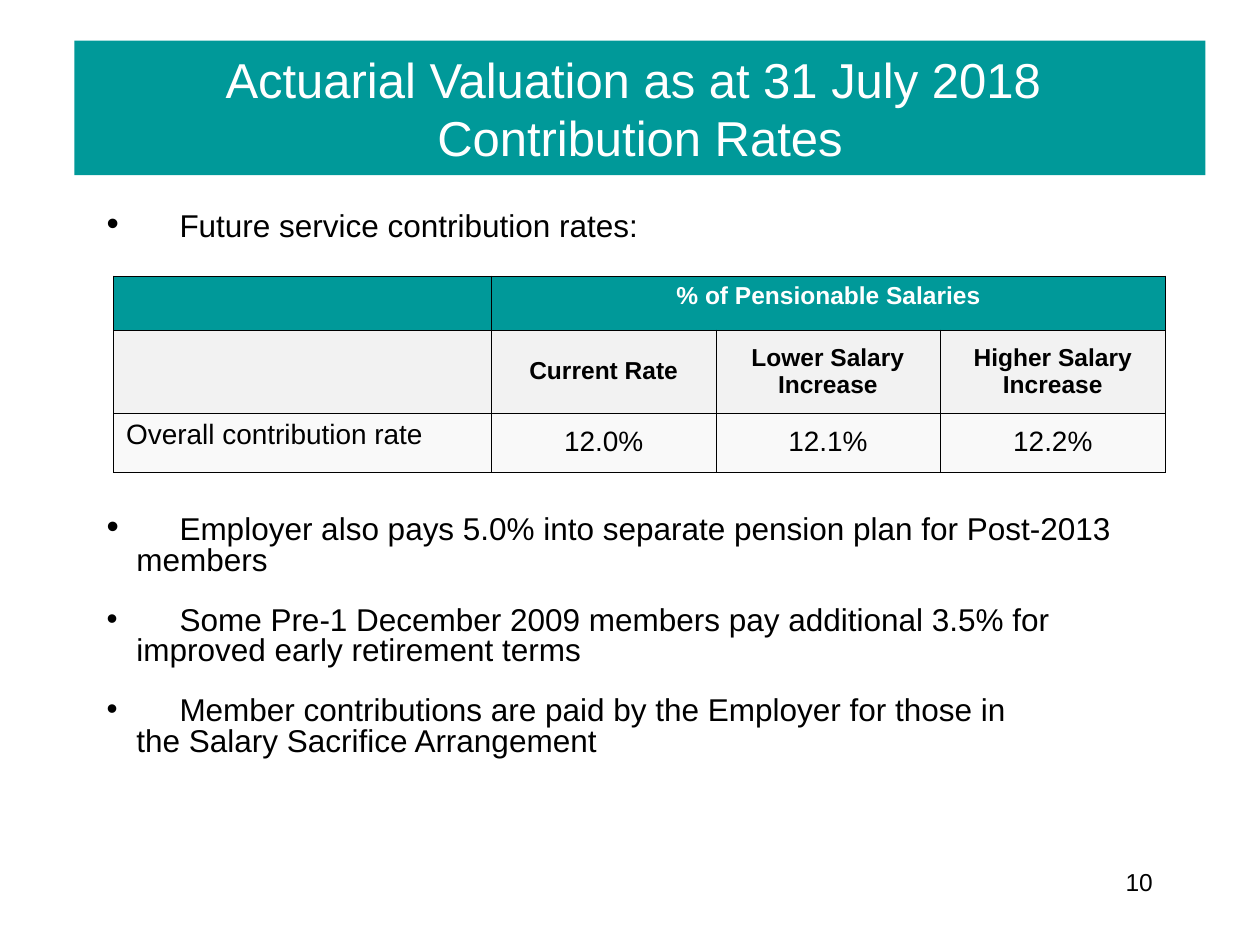
import lxml.etree
import pptx
import pptx.dml.color
import pptx.enum.text
import pptx.oxml.ns
import pptx.util

Cm = pptx.util.Cm
Pt = pptx.util.Pt
ALIGN = pptx.enum.text.PP_ALIGN
ANCHOR = pptx.enum.text.MSO_ANCHOR
qn = pptx.oxml.ns.qn

COLOURS = {"teal": "009999", "white": "FFFFFF", "black": "000000",
           "subheader": "F2F2F2", "body": "F9F9F9"}
FONT = "Arial"

TITLE_LINES = ["Actuarial Valuation as at 31 July 2018 ", "Contribution Rates"]

# lines, bullet size, space before in points
BULLETS = [
    (["Future service contribution rates:"], 20, 0),
    (["Employer also pays 5.0% into separate pension plan for Post-2013 members"], 20, 154),
    (["Some Pre-1 December 2009 members pay additional 3.5% for improved early retirement terms"],
     18, 17),
    (["Member contributions are paid by the Employer for those in",
      "the Salary Sacrifice Arrangement"], 18, 17),
]
HANGING = Cm(0.6)
FIRST_LINE_TAB = Cm(1.47)

COLUMN_WIDTHS = [7.62, 4.52, 4.52, 4.55]
# row height, fill, text colour, size, bold, cell texts
TABLE_ROWS = [
    (1.09, "teal", "white", 14, True, ["", "% of Pensionable Salaries", "", ""]),
    (1.67, "subheader", "black", 14, True,
     ["", "Current Rate", "Lower Salary Increase", "Higher Salary Increase"]),
    (1.19, "body", "black", 16, False,
     ["Overall contribution rate", "12.0%", "12.1%", "12.2%"]),
]
PAGE_NUMBER = "10"


def colour(name):
    return pptx.dml.color.RGBColor.from_string(COLOURS[name])


def add_run(paragraph, text, size, colour_name="black", bold=False):
    run = paragraph.add_run()
    run.text = text
    run.font.name = FONT
    run.font.size = Pt(size)
    run.font.bold = bold
    run.font.color.rgb = colour(colour_name)


def next_paragraph(text_frame, index):
    return text_frame.add_paragraph() if index else text_frame.paragraphs[0]


def add_text_box(slide, left, top, width, height):
    box = slide.shapes.add_textbox(Cm(left), Cm(top), Cm(width), Cm(height))
    box.text_frame.word_wrap = True
    return box.text_frame


def add_title(slide):
    title = slide.shapes.title
    title.left, title.top, title.width, title.height = Cm(1.5), Cm(0.82), Cm(22.8), Cm(2.71)
    title.fill.solid()
    title.fill.fore_color.rgb = colour("teal")
    title.text_frame.auto_size = pptx.enum.text.MSO_AUTO_SIZE.NONE
    title.text_frame.vertical_anchor = ANCHOR.MIDDLE
    for index, line in enumerate(TITLE_LINES):
        paragraph = next_paragraph(title.text_frame, index)
        paragraph.alignment = ALIGN.CENTER
        paragraph.space_before = Pt(0)
        add_run(paragraph, line, 28, "white")


def set_bullet(paragraph):
    """Add a hanging bullet and the tab stop that sets in the first line."""
    properties = paragraph._p.get_or_add_pPr()
    properties.set("marL", str(HANGING))
    properties.set("indent", str(-HANGING))
    lxml.etree.SubElement(properties, qn("a:buFont"), typeface=FONT)
    lxml.etree.SubElement(properties, qn("a:buChar"), char="•")
    tabs = lxml.etree.SubElement(properties, qn("a:tabLst"))
    lxml.etree.SubElement(tabs, qn("a:tab"), pos=str(FIRST_LINE_TAB), algn="l")


def add_bullets(slide):
    text_frame = add_text_box(slide, 1.9, 4.12, 21.6, 13.1)
    for index, (lines, bullet_size, space_before) in enumerate(BULLETS):
        paragraph = next_paragraph(text_frame, index)
        paragraph.line_spacing = 0.8
        paragraph.space_before = Pt(space_before)
        set_bullet(paragraph)
        add_run(paragraph, "\t", bullet_size)
        for line_index, line in enumerate(lines):
            if line_index:
                paragraph.add_line_break()
            add_run(paragraph, line, 18)


def set_borders(cell):
    properties = cell._tc.get_or_add_tcPr()
    for position, side in enumerate(("lnL", "lnR", "lnT", "lnB")):
        line = lxml.etree.Element(qn(f"a:{side}"), w=str(Pt(0.25)))
        fill = lxml.etree.SubElement(line, qn("a:solidFill"))
        lxml.etree.SubElement(fill, qn("a:srgbClr"), val=COLOURS["black"])
        properties.insert(position, line)


def add_rates_table(slide):
    heights = [row[0] for row in TABLE_ROWS]
    frame = slide.shapes.add_table(len(TABLE_ROWS), len(COLUMN_WIDTHS), Cm(2.29), Cm(5.56),
                                   Cm(sum(COLUMN_WIDTHS)), Cm(sum(heights)))
    table = frame.table
    for column, width in zip(table.columns, COLUMN_WIDTHS):
        column.width = Cm(width)
    for row_index, (height, fill, text_colour, size, bold, texts) in enumerate(TABLE_ROWS):
        table.rows[row_index].height = Cm(height)
        for column_index, text in enumerate(texts):
            cell = table.cell(row_index, column_index)
            cell.fill.solid()
            cell.fill.fore_color.rgb = colour(fill)
            set_borders(cell)
            if not text:
                continue
            paragraph = cell.text_frame.paragraphs[0]
            add_run(paragraph, text, size, text_colour, bold)
            if column_index:
                paragraph.alignment = ALIGN.CENTER
            if row_index and column_index:
                cell.vertical_anchor = ANCHOR.MIDDLE
    table.cell(0, 1).merge(table.cell(0, len(COLUMN_WIDTHS) - 1))


def add_page_number(slide):
    paragraph = add_text_box(slide, 18.2, 17.35, 5.29, 1.27).paragraphs[0]
    paragraph.alignment = ALIGN.RIGHT
    add_run(paragraph, PAGE_NUMBER, 14)


def main():
    presentation = pptx.Presentation()
    presentation.slide_width, presentation.slide_height = Cm(25.4), Cm(19.05)
    slide = presentation.slides.add_slide(presentation.slide_layouts[5])
    add_bullets(slide)
    add_title(slide)
    add_rates_table(slide)
    add_page_number(slide)
    presentation.save("out.pptx")


if __name__ == "__main__":
    main()
